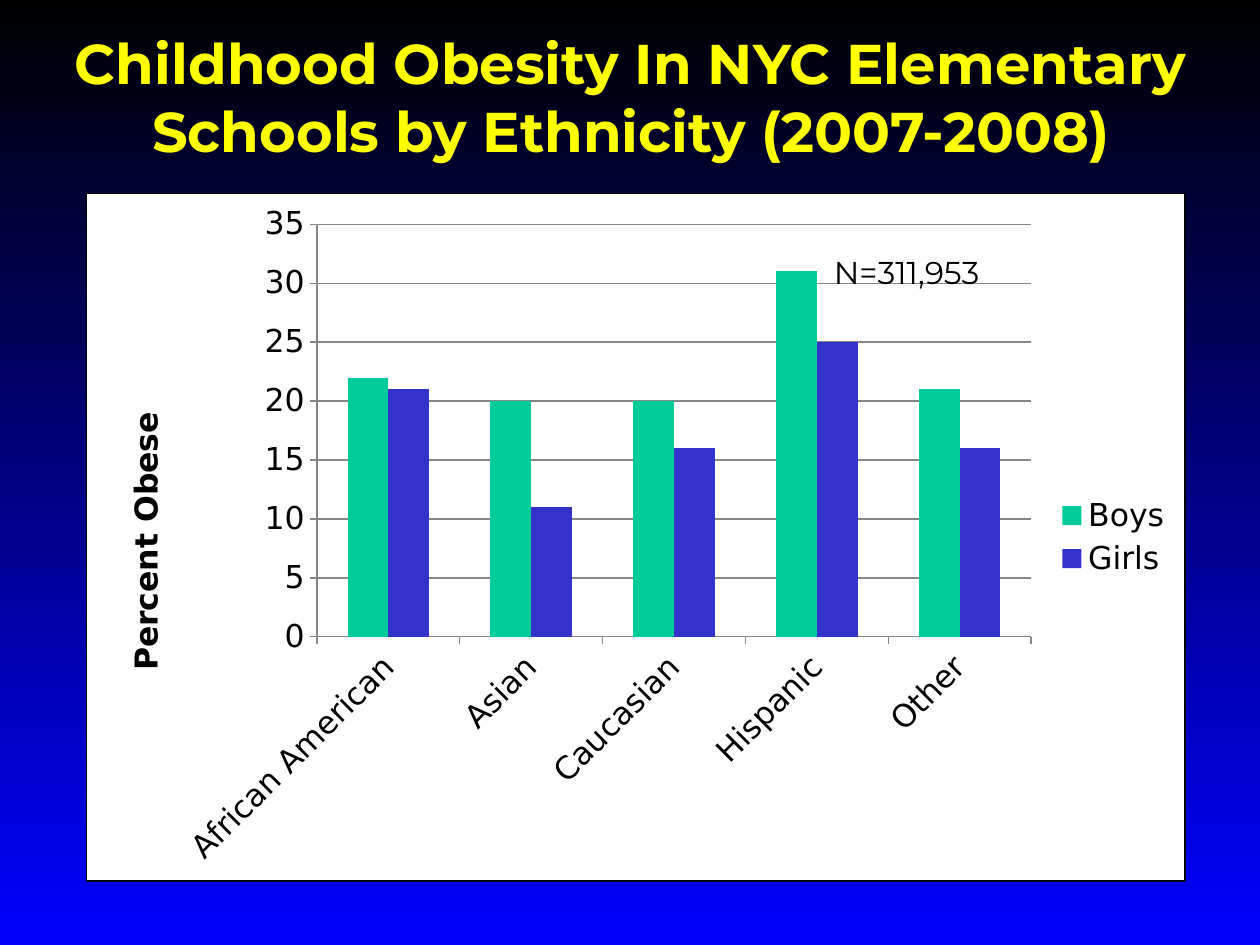
import pptx
import pptx.chart.data
import pptx.dml.color
import pptx.enum.chart
import pptx.enum.text
import pptx.oxml
import pptx.oxml.ns
import pptx.util

TITLE = "Childhood Obesity In NYC Elementary Schools by Ethnicity (2007-2008)"
SAMPLE = "N=311,953"
AXIS_TITLE = "Percent Obese"
GROUPS = ["African American", "Asian", "Caucasian", "Hispanic", "Other"]
SERIES = [
    ("Boys", [22, 20, 20, 31, 21], "boys"),
    ("Girls", [21, 11, 16, 25, 16], "girls"),
]
COLORS = {
    "top": "000000", "bottom": "0000FF", "title": "FFFF00", "text": "000000",
    "panel": "FFFFFF", "boys": "00CC99", "girls": "3333CC", "grid": "868686",
}
HEAD_FONT, CHART_FONT = "Montserrat", "DejaVu Sans"
W, H = 10, 7.5
# left, top, width, height as shares of the slide
TITLE_BOX = (0.013, 0.024, 0.976, 0.157)
CHART_BOX = (0.068, 0.204, 0.873, 0.729)
SAMPLE_BOX = (0.652, 0.261, 0.167, 0.053)
# shares of the chart
PLOT_LAYOUT = {"x": 0.21, "y": 0.045, "w": 0.65, "h": 0.6}
AXIS_TITLE_LAYOUT = {"x": 0.03, "y": 0.31}
NS = pptx.oxml.ns.nsdecls("c", "a")


def rgb(name):
    return pptx.dml.color.RGBColor.from_string(COLORS[name])


def place(box):
    return [pptx.util.Inches(share * side) for share, side in zip(box, (W, H, W, H))]


def style(font, name, size, color, bold=False):
    font.name, font.size, font.bold = name, pptx.util.Pt(size), bold
    font.color.rgb = rgb(color)


def add_text(s, box, text, size, color, bold=False, centred=False):
    tf = s.shapes.add_textbox(*place(box)).text_frame
    tf.word_wrap = centred
    tf.auto_size = pptx.enum.text.MSO_AUTO_SIZE.SHAPE_TO_FIT_TEXT
    p = tf.paragraphs[0]
    p.text = text
    if centred:
        p.alignment = pptx.enum.text.PP_ALIGN.CENTER
    style(p.runs[0].font, HEAD_FONT, size, color, bold)


def set_layout(parent, index, shares, inner=False):
    """Give a chart part a manual layout, in shares of the chart."""
    for old in parent.findall(pptx.oxml.ns.qn("c:layout")):
        parent.remove(old)
    target = '<c:layoutTarget val="inner"/>' if inner else ""
    modes = "".join(f'<c:{k}Mode val="edge"/>' for k in "xy")
    values = "".join(f'<c:{k} val="{v}"/>' for k, v in shares.items())
    parent.insert(index, pptx.oxml.parse_xml(
        f"<c:layout {NS}><c:manualLayout>{target}{modes}{values}"
        "</c:manualLayout></c:layout>"))


def add_chart(s):
    data = pptx.chart.data.CategoryChartData()
    data.categories = GROUPS
    for name, values, _ in SERIES:
        data.add_series(name, values)
    chart = s.shapes.add_chart(
        pptx.enum.chart.XL_CHART_TYPE.COLUMN_CLUSTERED, *place(CHART_BOX), data).chart
    chart.has_title = False
    style(chart.font, CHART_FONT, 18, "text")

    plot = chart.plots[0]
    plot.gap_width, plot.overlap, plot.vary_by_categories = 150, 0, False
    for series, (_, _, color) in zip(plot.series, SERIES):
        series.format.fill.solid()
        series.format.fill.fore_color.rgb = rgb(color)

    cat, val = chart.category_axis, chart.value_axis
    val.minimum_scale, val.maximum_scale, val.major_unit = 0, 35, 5
    val.has_major_gridlines = True
    for axis in (cat, val):
        axis.major_tick_mark = pptx.enum.chart.XL_TICK_MARK.OUTSIDE
        style(axis.tick_labels.font, CHART_FONT, 18, "text")
    for line in (cat.format.line, val.format.line, val.major_gridlines.format.line):
        line.color.rgb = rgb("grid")
        line.width = pptx.util.Pt(0.75)

    tf = val.axis_title.text_frame
    tf.text = AXIS_TITLE
    style(tf.paragraphs[0].runs[0].font, CHART_FONT, 18, "text", True)

    chart.has_legend = True
    chart.legend.position = pptx.enum.chart.XL_LEGEND_POSITION.RIGHT
    chart.legend.include_in_layout = False
    style(chart.legend.font, CHART_FONT, 18, "text")

    space = chart._chartSpace
    space.xpath("//c:catAx/c:txPr/a:bodyPr")[0].set("rot", "-2700000")
    turned = space.xpath("//c:valAx/c:title//a:bodyPr")[0]
    turned.set("rot", "-5400000")
    turned.set("vert", "horz")
    set_layout(space.xpath("//c:plotArea")[0], 0, PLOT_LAYOUT, inner=True)
    set_layout(space.xpath("//c:valAx/c:title")[0], 1, AXIS_TITLE_LAYOUT)
    fill, edge = (f'<a:solidFill><a:srgbClr val="{COLORS[c]}"/></a:solidFill>'
                  for c in ("panel", "text"))
    space.xpath("c:chart")[0].addnext(pptx.oxml.parse_xml(
        f'<c:spPr {NS}>{fill}<a:ln w="9525">{edge}</a:ln></c:spPr>'))


def main():
    prs = pptx.Presentation()
    prs.slide_width, prs.slide_height = pptx.util.Inches(W), pptx.util.Inches(H)
    s = prs.slides.add_slide(prs.slide_layouts[6])
    fill = s.background.fill
    fill.gradient()
    fill.gradient_angle = 270
    for stop, position, color in zip(fill.gradient_stops, (0, 1), ("top", "bottom")):
        stop.position, stop.color.rgb = position, rgb(color)
    add_chart(s)
    add_text(s, TITLE_BOX, TITLE, 32, "title", bold=True, centred=True)
    add_text(s, SAMPLE_BOX, SAMPLE, 18, "text")
    prs.save("out.pptx")


if __name__ == "__main__":
    main()
